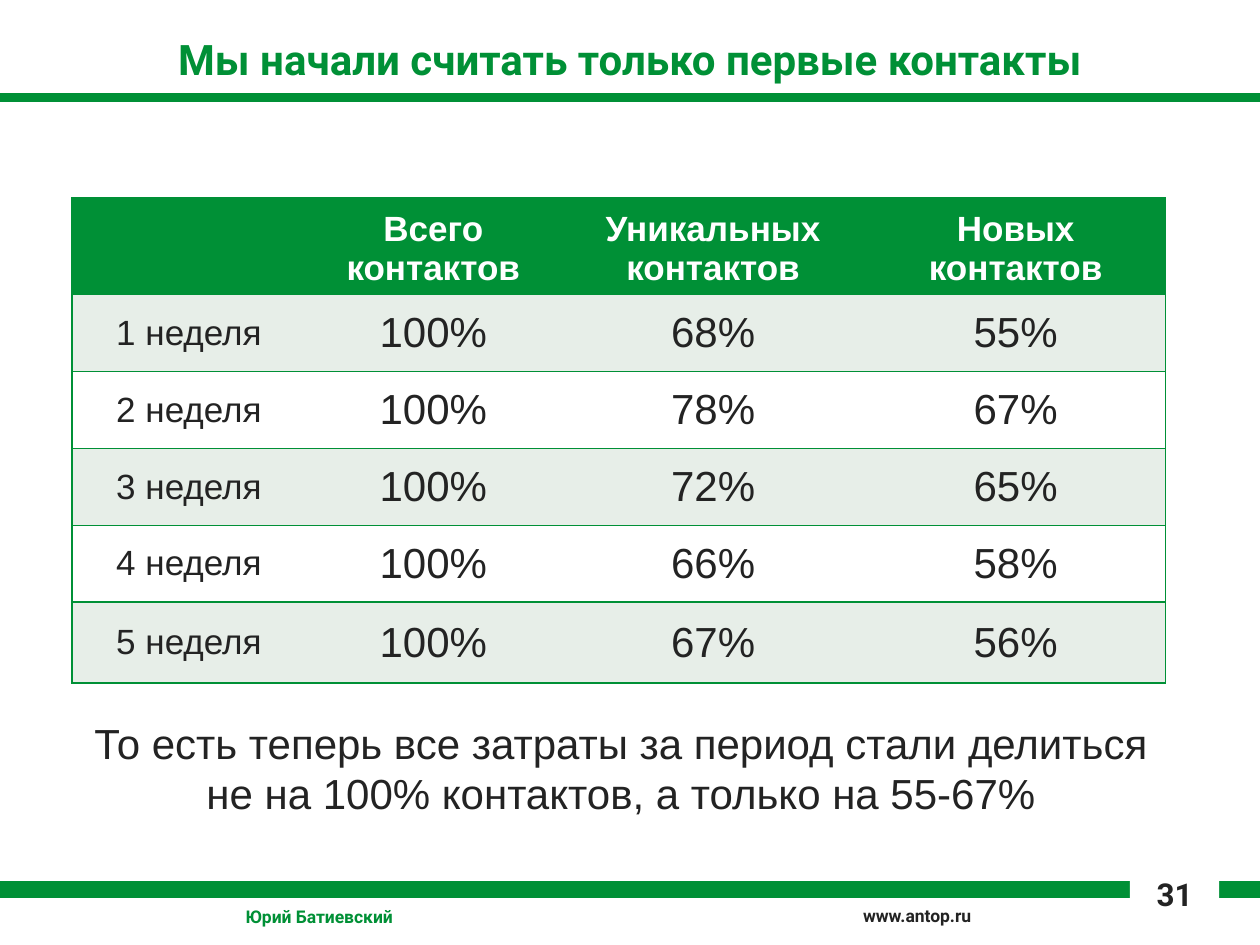
from lxml import etree
from pptx import Presentation
from pptx.dml.color import RGBColor
from pptx.enum.shapes import MSO_CONNECTOR, MSO_SHAPE
from pptx.enum.text import MSO_ANCHOR, PP_ALIGN
from pptx.oxml.ns import qn
from pptx.util import Cm, Pt

STRAIGHT = MSO_CONNECTOR.STRAIGHT
RECTANGLE = MSO_SHAPE.RECTANGLE
TOP, MIDDLE, BOTTOM = MSO_ANCHOR.TOP, MSO_ANCHOR.MIDDLE, MSO_ANCHOR.BOTTOM
LEFT, CENTER = PP_ALIGN.LEFT, PP_ALIGN.CENTER

COLORS = {"green": "009036", "text": "232323", "white": "FFFFFF", "band": "E7EEE8"}
SLIDE_WIDTH, SLIDE_HEIGHT = 25.4, 19.05

# Text formats
TITLE = {"name": "Roboto", "size": Pt(24), "bold": True, "color": "green"}
FOOTER_AUTHOR = {**TITLE, "size": Pt(10)}
FOOTER_SITE = {**FOOTER_AUTHOR, "color": "text"}
PAGE_NUMBER = {**FOOTER_SITE, "size": Pt(18)}
BODY = {"name": "Arial", "size": Pt(24), "bold": False, "color": "text"}
ROW_LABEL = {**BODY, "size": Pt(20)}
TABLE_HEADER = {**ROW_LABEL, "bold": True, "color": "white"}

HEADERS = ["", "Всего контактов", "Уникальных контактов", "Новых контактов"]
WEEKS = [(68, 55), (78, 67), (72, 65), (66, 58), (67, 56)]
COLUMN_WIDTHS = [4.72, 5.13, 6.15, 6.05]
ROW_HEIGHTS = [1.75] + [1.55] * 4 + [1.63]


def rgb(name):
    return RGBColor.from_string(COLORS[name])


def write_text(frame, text, style, align=LEFT):
    paragraph = frame.paragraphs[0]
    paragraph.alignment = align
    font = paragraph.add_run().font if not text else None
    if text:
        run = paragraph.add_run()
        run.text = text
        font = run.font
    for key, value in style.items():
        if key == "color":
            font.color.rgb = rgb(value)
        else:
            setattr(font, key, value)
    return paragraph


def add_text(slide, box, text, style, align=LEFT, anchor=TOP):
    shape = slide.shapes.add_textbox(*map(Cm, box))
    shape.text_frame.word_wrap = True
    shape.text_frame.vertical_anchor = anchor
    write_text(shape.text_frame, text, style, align)


def add_rule(slide, left, top, width, weight):
    rule = slide.shapes.add_connector(STRAIGHT, Cm(left), Cm(top), Cm(left + width), Cm(top))
    rule.line.color.rgb = rgb("green")
    rule.line.width = Pt(weight)
    etree.SubElement(rule.element.spPr, qn("a:effectLst"))


def set_borders(cell, visible_sides):
    properties = cell._tc.get_or_add_tcPr()
    for side in "LRTB":
        line = etree.SubElement(properties, qn(f"a:ln{side}"), w=str(Pt(1)))
        if side in visible_sides:
            fill = etree.SubElement(line, qn("a:solidFill"))
            etree.SubElement(fill, qn("a:srgbClr"), val=COLORS["green"])
        else:
            etree.SubElement(line, qn("a:noFill"))


def add_header(slide, left, top, width, height):
    add_text(slide, (left + 1.3, top + 0.53, width - 2.6, 1.3),
             "Мы начали считать только первые контакты", TITLE, CENTER, MIDDLE)
    add_rule(slide, left, top + height, width, 5)


def add_contacts_table(slide, left, top, width, height):
    rows = [HEADERS] + [
        [f"{week} неделя", "100%", f"{unique}%", f"{new}%"]
        for week, (unique, new) in enumerate(WEEKS, 1)
    ]
    table = slide.shapes.add_table(
        len(rows), len(HEADERS), Cm(left), Cm(top), Cm(width), Cm(height)).table
    for column, column_width in zip(table.columns, COLUMN_WIDTHS):
        column.width = Cm(column_width)
    for row, row_height in zip(table.rows, ROW_HEIGHTS):
        row.height = Cm(row_height)

    for i, row in enumerate(rows):
        row_fill = "green" if i == 0 else "band" if i % 2 else "white"
        for j, text in enumerate(row):
            cell = table.cell(i, j)
            sides = "TB" + ("L" if j == 0 else "") + ("R" if j == len(row) - 1 else "")
            set_borders(cell, sides)
            cell.fill.solid()
            cell.fill.fore_color.rgb = rgb(row_fill)
            cell.vertical_anchor = MIDDLE if i else BOTTOM
            style = TABLE_HEADER if i == 0 else BODY if j else ROW_LABEL
            if text:
                write_text(cell.text_frame, text, style, CENTER)


def add_conclusion(slide, left, top, width, height):
    add_text(slide, (left, top, width, height),
             "То есть теперь все затраты за период стали делиться "
             "не на 100% контактов, а только на 55-67%", BODY, CENTER)


def add_footer(slide, left, top, width, height):
    add_rule(slide, left, top + 0.53, width, 10)
    add_text(slide, (left + 17.15, top + 0.71, 6.25, 0.69), "www.antop.ru", FOOTER_SITE)
    add_text(slide, (left + 4.7, top + 0.74, 12, 0.61), "Юрий Батиевский", FOOTER_AUTHOR)
    # Page number over a gap in the rule
    plate = slide.shapes.add_shape(
        RECTANGLE, Cm(left + 22.78), Cm(top), Cm(1.8), Cm(height))
    plate.shadow.inherit = False
    plate.fill.solid()
    plate.fill.fore_color.rgb = rgb("white")
    plate.line.fill.background()
    plate.text_frame.vertical_anchor = TOP
    write_text(plate.text_frame, "31", PAGE_NUMBER, CENTER).line_spacing = 1.15


def main():
    presentation = Presentation()
    presentation.slide_width, presentation.slide_height = Cm(SLIDE_WIDTH), Cm(SLIDE_HEIGHT)
    slide = presentation.slides.add_slide(presentation.slide_layouts[6])
    add_header(slide, 0, 0, SLIDE_WIDTH, 1.96)
    add_contacts_table(slide, 1.45, 3.99, sum(COLUMN_WIDTHS), sum(ROW_HEIGHTS))
    add_conclusion(slide, 1.52, 14.33, 22, 2.31)
    add_footer(slide, 0, 17.4, SLIDE_WIDTH, 1.65)
    presentation.save("out.pptx")


if __name__ == "__main__":
    main()
